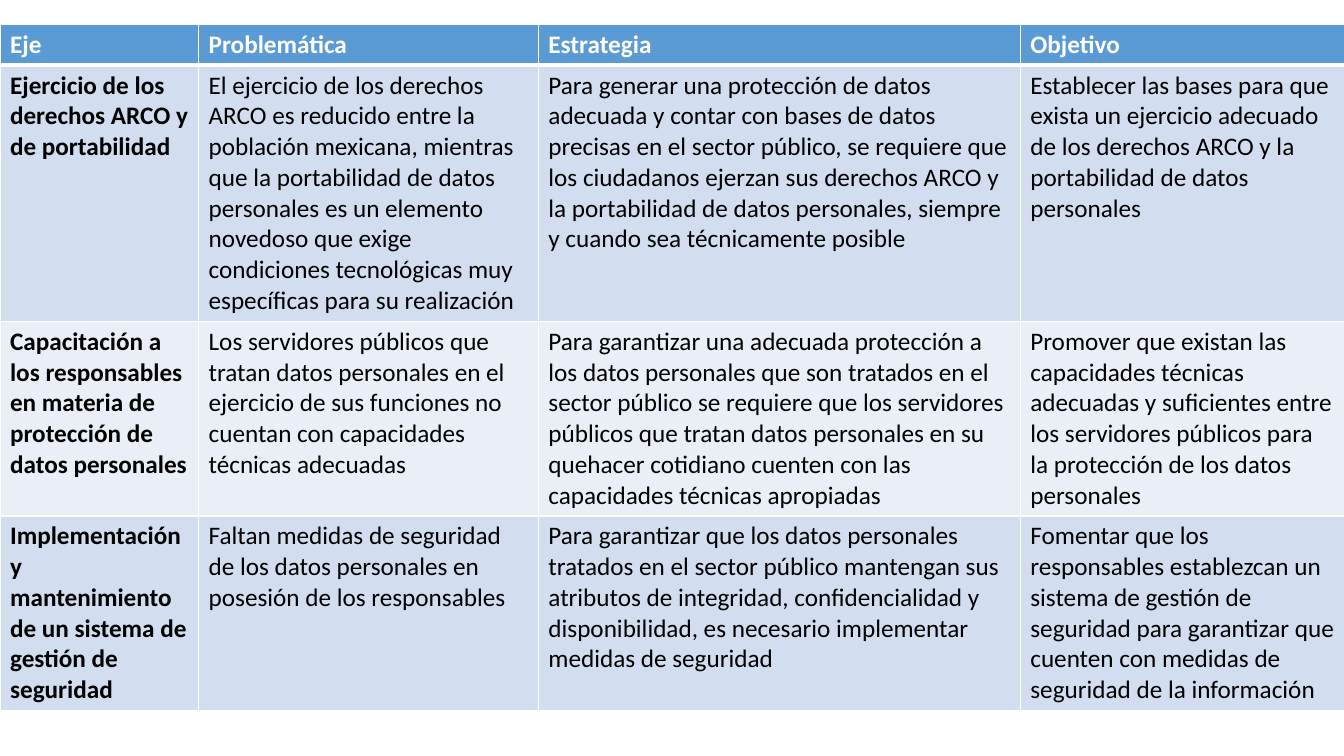
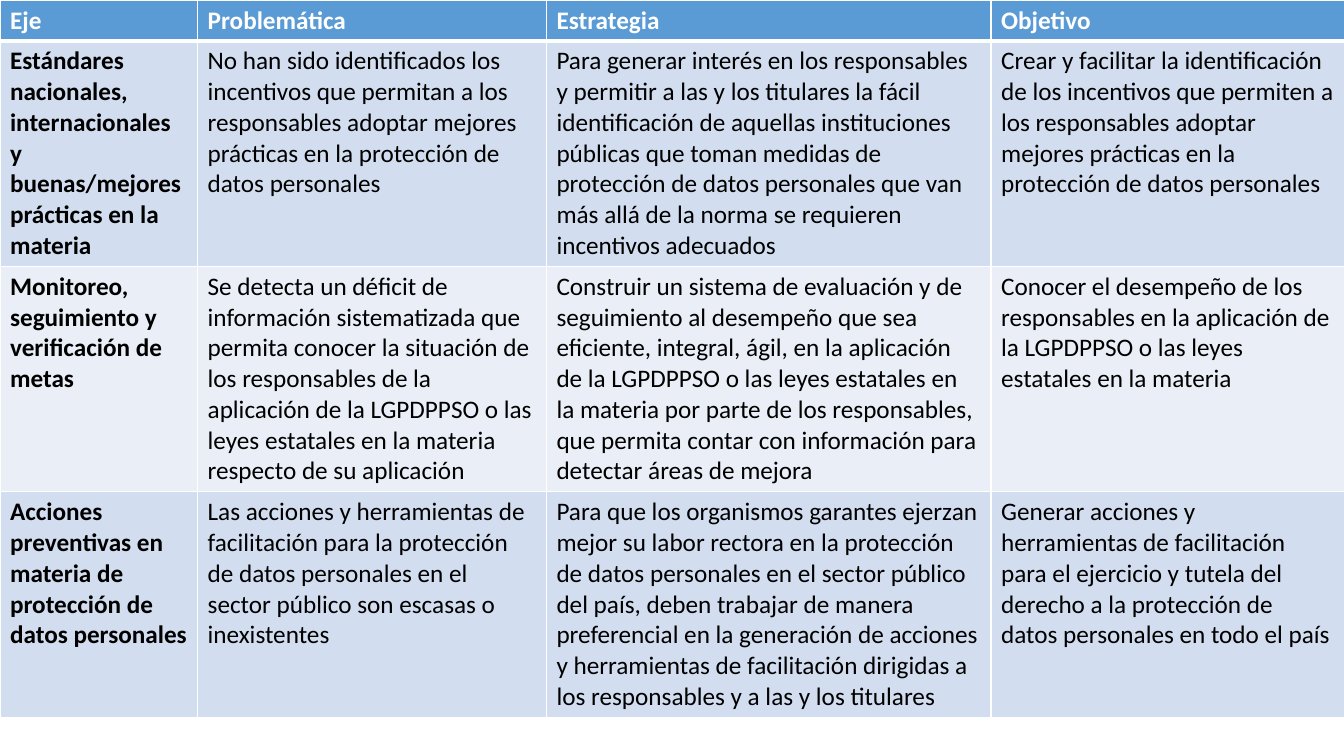
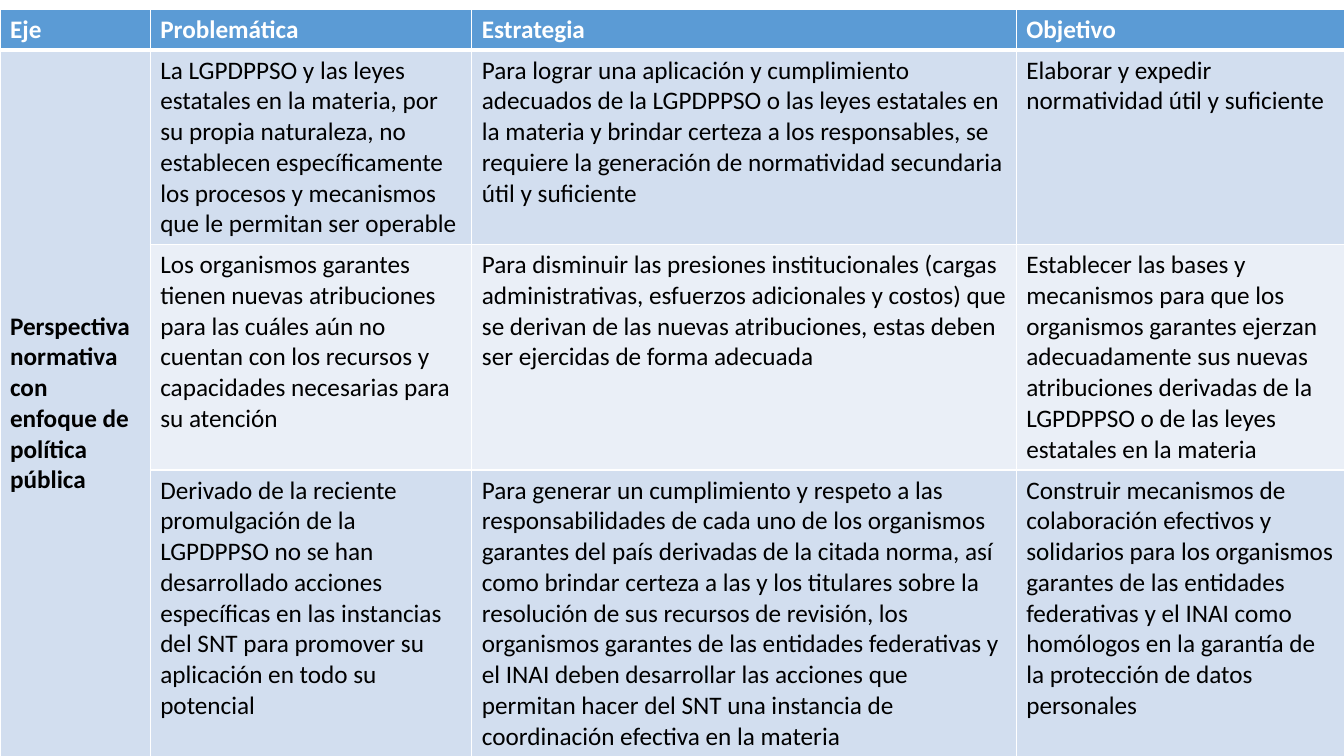
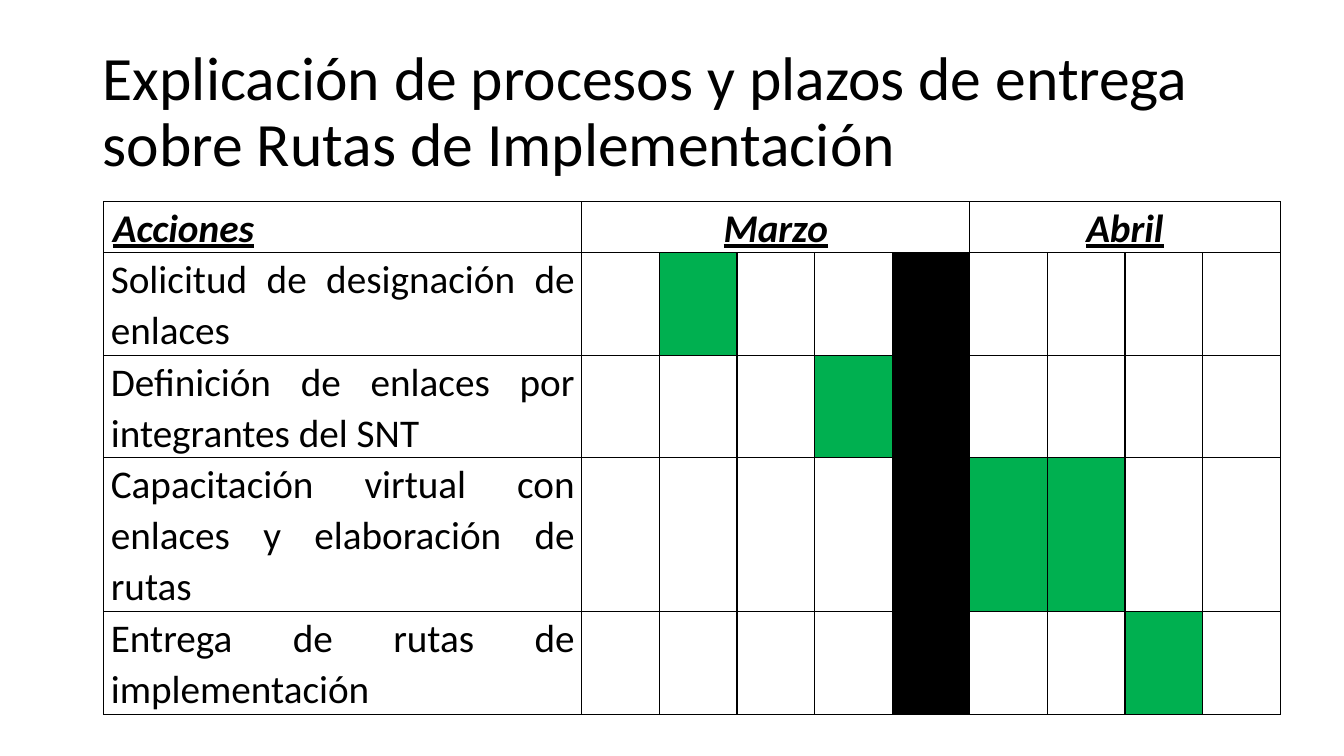
from lxml.etree import SubElement
from pptx import Presentation
from pptx.dml.color import RGBColor
from pptx.enum.text import MSO_ANCHOR, MSO_AUTO_SIZE, PP_ALIGN
from pptx.oxml.ns import qn
from pptx.util import Inches, Pt

FONT = "Calibri"
BLACK, WHITE = "000000", "FFFFFF"
HEADER_BLUE, BAND_DARK, BAND_LIGHT = "5B9BD5", "D2DEEF", "EAEFF7"
GREEN = "00B050"
SIDES = ("L", "R", "T", "B")
HEADINGS = ["Eje", "Problemática", "Estrategia", "Objetivo"]
TITLE_LAYOUT, BLANK_LAYOUT = 5, 6

AXIS_TABLES = [
    {
        "top": 0.24,
        "widths": [1.97, 3.37, 4.78, 3.22],
        "lines": [1, 8, 6, 6],
        "rows": [
            ["Ejercicio de los derechos ARCO y de portabilidad",
             "El ejercicio de los derechos ARCO es reducido entre la población mexicana, mientras que la portabilidad de datos personales es un elemento novedoso que exige condiciones tecnológicas muy específicas para su realización",
             "Para generar una protección de datos adecuada y contar con bases de datos precisas en el sector público, se requiere que los ciudadanos ejerzan sus derechos ARCO y la portabilidad de datos personales, siempre y cuando sea técnicamente posible",
             "Establecer las bases para que exista un ejercicio adecuado de los derechos ARCO y la portabilidad de datos personales"],
            ["Capacitación a los responsables en materia de protección de datos personales",
             "Los servidores públicos que tratan datos personales en el ejercicio de sus funciones no cuentan con capacidades técnicas adecuadas",
             "Para garantizar una adecuada protección a los datos personales que son tratados en el sector público se requiere que los servidores públicos que tratan datos personales en su quehacer cotidiano cuenten con las capacidades técnicas apropiadas",
             "Promover que existan las capacidades técnicas adecuadas y suficientes entre los servidores públicos para la protección de los datos personales"],
            ["Implementación y mantenimiento de un sistema de gestión de seguridad",
             "Faltan medidas de seguridad de los datos personales en posesión de los responsables",
             "Para garantizar que los datos personales tratados en el sector público mantengan sus atributos de integridad, confidencialidad y disponibilidad, es necesario implementar medidas de seguridad",
             "Fomentar que los responsables establezcan un sistema de gestión de seguridad para garantizar que cuenten con medidas de seguridad de la información"],
        ],
    },
    {
        "top": 0,
        "widths": [1.96, 3.46, 4.41, 3.51],
        "lines": [1, 7, 7, 7],
        "rows": [
            ["Estándares nacionales, internacionales y buenas/mejores prácticas en la materia",
             "No han sido identificados los incentivos que permitan a los responsables adoptar mejores prácticas en la protección de datos personales",
             "Para generar interés en los responsables y permitir a las y los titulares la fácil identificación de aquellas instituciones públicas que toman medidas de protección de datos personales que van más allá de la norma se requieren incentivos adecuados",
             "Crear y facilitar la identificación de los incentivos que permiten a los responsables adoptar mejores prácticas en la protección de datos personales"],
            ["Monitoreo, seguimiento y verificación de metas",
             "Se detecta un déficit de información sistematizada que permita conocer la situación de los responsables de la aplicación de la LGPDPPSO o las leyes estatales en la materia respecto de su aplicación",
             "Construir un sistema de evaluación y de seguimiento al desempeño que sea eficiente, integral, ágil, en la aplicación de la LGPDPPSO o las leyes estatales en la materia por parte de los responsables, que permita contar con información para detectar áreas de mejora",
             "Conocer el desempeño de los responsables en la aplicación de la LGPDPPSO o las leyes estatales en la materia"],
            ["Acciones preventivas en materia de protección de datos personales",
             "Las acciones y herramientas de facilitación para la protección de datos personales en el sector público son escasas o inexistentes",
             "Para que los organismos garantes ejerzan mejor su labor rectora en la protección de datos personales en el sector público del país, deben trabajar de manera preferencial en la generación de acciones y herramientas de facilitación dirigidas a los responsables y a las y los titulares",
             "Generar acciones y herramientas de facilitación para el ejercicio y tutela del derecho a la protección de datos personales en todo el país"],
        ],
    },
    {
        "top": 0.09,
        "widths": [1.49, 3.19, 5.4, 3.26],
        "lines": [1, 6, 7, 9],
        "shared_axis": True,
        "rows": [
            ["Perspectiva normativa con enfoque de política pública",
             "La LGPDPPSO y las leyes estatales en la materia, por su propia naturaleza, no establecen específicamente los procesos y mecanismos que le permitan ser operable",
             "Para lograr una aplicación y cumplimiento adecuados de la LGPDPPSO o las leyes estatales en la materia y brindar certeza a los responsables, se requiere la generación de normatividad secundaria útil y suficiente",
             "Elaborar y expedir normatividad útil y suficiente"],
            ["",
             "Los organismos garantes tienen nuevas atribuciones para las cuáles aún no cuentan con los recursos y capacidades necesarias para su atención",
             "Para disminuir las presiones institucionales (cargas administrativas, esfuerzos adicionales y costos) que se derivan de las nuevas atribuciones, estas deben ser ejercidas de forma adecuada",
             "Establecer las bases y mecanismos para que los organismos garantes ejerzan adecuadamente sus nuevas atribuciones derivadas de la LGPDPPSO o de las leyes estatales en la materia"],
            ["",
             "Derivado de la reciente promulgación de la LGPDPPSO no se han desarrollado acciones específicas en las instancias del SNT para promover su aplicación en todo su potencial",
             "Para generar un cumplimiento y respeto a las responsabilidades de cada uno de los organismos garantes del país derivadas de la citada norma, así como brindar certeza a las y los titulares sobre la resolución de sus recursos de revisión, los organismos garantes de las entidades federativas y el INAI deben desarrollar las acciones que permitan hacer del SNT una instancia de coordinación efectiva en la materia",
             "Construir mecanismos de colaboración efectivos y solidarios para los organismos garantes de las entidades federativas y el INAI como homólogos en la garantía de la protección de datos personales"],
        ],
    },
]

WEEKS = 9
CLOSED_WEEK = 5
ACTIONS = [
    ("Solicitud de designación de enlaces", 2, [2]),
    ("Definición de enlaces por integrantes del SNT", 2, [4]),
    ("Capacitación virtual con enlaces y elaboración de rutas", 3, [6, 7]),
    ("Entrega de rutas de implementación", 2, [8]),
]
MONTHS = [("Marzo", 1, 5), ("Abril", 6, 9)]


def colour(value):
    """Return the colour for a hex string."""
    return RGBColor.from_string(value)


def apply(target, formats):
    """Set every attribute named in the format values."""
    for name, value in formats.items():
        setattr(target, name, value)


def write(frame, text, size, ink=BLACK, paragraph=None, **font):
    """Write one formatted paragraph into a text frame."""
    para = frame.paragraphs[0]
    apply(para, paragraph or {})
    span = para.add_run()
    span.text = text
    apply(span.font, {"name": FONT, "size": Pt(size), **font})
    span.font.color.rgb = colour(ink)


def paint(cell, fill, line, **widths):
    """Give a cell its four borders and its fill."""
    properties = cell._tc.get_or_add_tcPr()
    for side in SIDES:
        border = SubElement(properties, qn(f"a:ln{side}"), w=str(Pt(widths.get(side, 1))))
        solid = SubElement(border, qn("a:solidFill"))
        SubElement(solid, qn("a:srgbClr"), val=line)
    cell.fill.solid()
    cell.fill.fore_color.rgb = colour(fill)


def add_grid(page, left, top, widths, heights):
    """Add a plain table with the given column widths and row heights."""
    frame = page.shapes.add_table(
        len(heights), len(widths), Inches(left), Inches(top),
        Inches(sum(widths)), Inches(sum(heights)))
    grid = frame.table
    apply(grid, {"first_row": False, "horz_banding": False})
    for column, width in zip(grid.columns, widths):
        column.width = Inches(width)
    for row, height in zip(grid.rows, heights):
        row.height = Inches(height)
    return grid


def add_axis_page(deck, top, widths, lines, rows, shared_axis=False):
    """Add a page with one table of axes, problems, strategies and goals."""
    page = deck.slides.add_slide(deck.slide_layouts[BLANK_LAYOUT])
    grid = add_grid(page, 0, top, widths, [0.1 + 0.3 * count for count in lines])
    for r, texts in enumerate([HEADINGS, *rows]):
        header = r == 0
        fill = HEADER_BLUE if header else (BAND_LIGHT, BAND_DARK)[r % 2]
        rules = {"B": 3} if header else {"T": 3} if r == 1 else {}
        for c, text in enumerate(texts):
            cell = grid.cell(r, c)
            paint(cell, BAND_DARK if shared_axis and c == 0 and r else fill, WHITE, **rules)
            if text:
                write(cell.text_frame, text, 18, WHITE if header else BLACK,
                      bold=header or c == 0)
    if shared_axis:
        axis = grid.cell(1, 0)
        axis.merge(grid.cell(len(rows), 0))
        axis.vertical_anchor = MSO_ANCHOR.MIDDLE


def add_title(page, text):
    """Place and write the page title."""
    title = page.shapes.title
    apply(title, {"left": Inches(0.92), "top": Inches(0.4),
                  "width": Inches(11.5), "height": Inches(1.45)})
    apply(title.text_frame, {"word_wrap": True, "auto_size": MSO_AUTO_SIZE.NONE,
                             "vertical_anchor": MSO_ANCHOR.MIDDLE})
    write(title.text_frame, text, 44,
          paragraph={"alignment": PP_ALIGN.LEFT, "line_spacing": 0.9})


def write_plan(cell, text, alignment, indent=0, **font):
    """Write a schedule cell with tight margins."""
    apply(cell, {"margin_left": Inches(0.07 + indent), "margin_right": Inches(0.07),
                 "margin_top": 0, "margin_bottom": 0})
    write(cell.text_frame, text, 28,
          paragraph={"alignment": alignment, "line_spacing": 1.07}, **font)


def add_schedule_page(deck):
    """Add the page with the weekly schedule of actions."""
    page = deck.slides.add_slide(deck.slide_layouts[TITLE_LAYOUT])
    add_title(page, "Explicación de procesos y plazos de entrega sobre Rutas de Implementación")
    heights = [0.5] + [0.5 * lines for _, lines, _ in ACTIONS]
    grid = add_grid(page, 1.03, 2, [4.74] + [0.77] * WEEKS, heights)
    heading = {"bold": True, "italic": True, "underline": True}
    for c in range(WEEKS + 1):
        paint(grid.cell(0, c), WHITE, BLACK)
    write_plan(grid.cell(0, 0), "Acciones", PP_ALIGN.LEFT, 0.02, **heading)
    for month, first, last in MONTHS:
        grid.cell(0, first).merge(grid.cell(0, last))
        write_plan(grid.cell(0, first), month, PP_ALIGN.CENTER, **heading)
    for r, (action, _, active) in enumerate(ACTIONS, 1):
        fills = {CLOSED_WEEK: BLACK, **dict.fromkeys(active, GREEN)}
        for c in range(WEEKS + 1):
            paint(grid.cell(r, c), fills.get(c, WHITE), BLACK)
        write_plan(grid.cell(r, 0), action, PP_ALIGN.JUSTIFY)


def main():
    """Build the deck and save it."""
    deck = Presentation()
    apply(deck, {"slide_width": Inches(13.33), "slide_height": Inches(7.5)})
    for content in AXIS_TABLES:
        add_axis_page(deck, **content)
    add_schedule_page(deck)
    deck.save("out.pptx")


if __name__ == "__main__":
    main()
